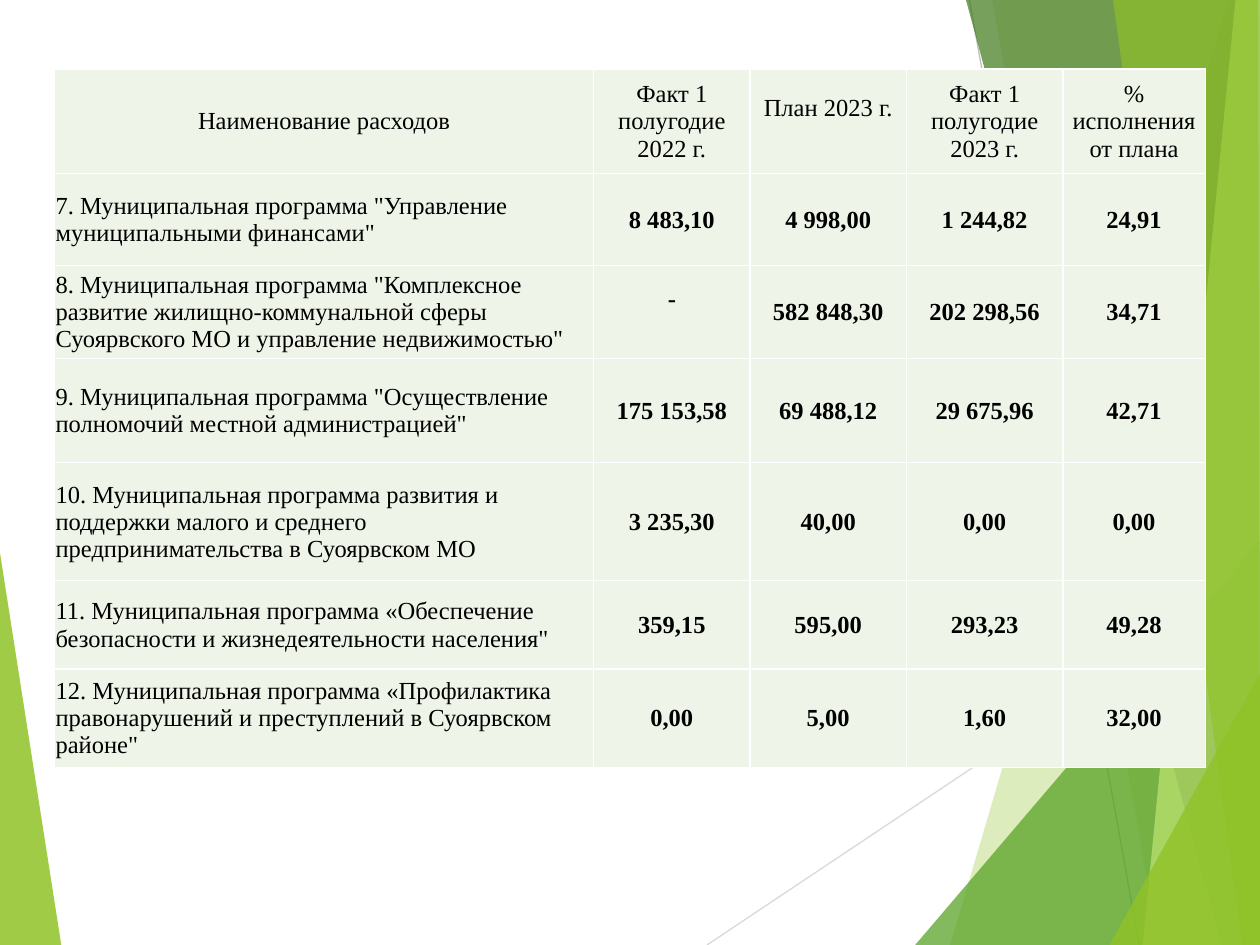
from lxml import etree
from pptx import Presentation
from pptx.dml.color import RGBColor
from pptx.enum.shapes import MSO_CONNECTOR
from pptx.enum.text import MSO_ANCHOR, PP_ALIGN
from pptx.oxml.ns import qn
from pptx.util import Pt

STRAIGHT = MSO_CONNECTOR.STRAIGHT
MIDDLE = MSO_ANCHOR.MIDDLE
LEFT, CENTER = PP_ALIGN.LEFT, PP_ALIGN.CENTER

WIDE, HIGH = 720, 540
FONT, SIZE = "Times New Roman", 14
COLORS = {
    "lime": "90C226", "green": "54A021", "dark": "3F7819", "pale": "C0E474",
    "light": "D9D9D9", "gray": "BFBFBF",
    "cell": "EEF4E8", "edge": "FFFFFF", "text": "000000",
}

DECOR = [
    ("shape", "lime", 85, [(0, 316), (35, HIGH), (0, HIGH)]),
    ("line", "light", 0.75, [(404, HIGH), (WIDE, 329)]),
    ("line", "gray", 0.75, [(554, 0), (651, HIGH)]),
    ("shape", "lime", 30, [(702, 0), (543, HIGH), (WIDE, HIGH), (WIDE, 0)]),
    ("shape", "lime", 20, [(567, 0), (662, HIGH), (WIDE, HIGH), (WIDE, 0)]),
    ("shape", "green", 72, [(523, HIGH), (WIDE, 309), (WIDE, HIGH)]),
    ("shape", "dark", 70, [(552, 0), (698, HIGH), (WIDE, HIGH), (WIDE, 0)]),
    ("shape", "pale", 70, [(706, 0), (653, HIGH), (WIDE, HIGH), (WIDE, 0)]),
    ("shape", "lime", 65, [(636, 0), (710, HIGH), (WIDE, HIGH), (719, 0)]),
    ("shape", "lime", 80, [(634, HIGH), (WIDE, 385), (WIDE, HIGH)]),
]

ROWS = [
    ("Наименование расходов", "Факт 1 полугодие 2022 г.", "План 2023 г.",
     "Факт 1 полугодие 2023 г.", "% исполнения от плана"),
    ('7. Муниципальная программа "Управление муниципальными финансами"',
     "8 483,10", "4 998,00", "1 244,82", "24,91"),
    ('8. Муниципальная программа "Комплексное развитие жилищно-коммунальной '
     'сферы Суоярвского МО и управление недвижимостью"',
     "-", "582 848,30", "202 298,56", "34,71"),
    ('9. Муниципальная программа "Осуществление полномочий местной администрацией"',
     "175 153,58", "69 488,12", "29 675,96", "42,71"),
    ("10. Муниципальная программа развития и поддержки малого и среднего "
     "предпринимательства в Суоярвском МО",
     "3 235,30", "40,00", "0,00", "0,00"),
    ('11. Муниципальная программа «Обеспечение безопасности и '
     'жизнедеятельности населения"',
     "359,15", "595,00", "293,23", "49,28"),
    ('12. Муниципальная программа «Профилактика правонарушений и '
     'преступлений в Суоярвском районе"',
     "0,00", "5,00", "1,60", "32,00"),
]
TABLE_LEFT, TABLE_TOP = 31.25, 39.5
COLS = [308, 89.4, 89.4, 89.4, 81.4]
HEIGHTS = [59.6, 52.6, 53.2, 59.6, 67.4, 50.4, 56.4]
RAISED = {(0, 2), (2, 1)}
LIFT = 15.5


def rgb(name):
    """Return the named colour."""
    return RGBColor.from_string(COLORS[name])


def add_shape(group, color, alpha, points):
    """Draw a translucent polygon."""
    path = group.shapes.build_freeform(*points[0], scale=Pt(1))
    path.add_line_segments(points[1:], close=True)
    shape = path.convert_to_shape()
    shape.shadow.inherit = False
    shape.line.fill.background()
    shape.fill.solid()
    shape.fill.fore_color.rgb = rgb(color)
    tint = shape.fill._xPr.find(".//" + qn("a:srgbClr"))
    etree.SubElement(tint, qn("a:alpha")).set("val", str(alpha * 1000))


def add_line(group, color, width, points):
    """Draw a thin straight line."""
    ends = [Pt(value) for point in points for value in point]
    line = group.shapes.add_connector(STRAIGHT, *ends)
    line.line.color.rgb = rgb(color)
    line.line.width = Pt(width)
    etree.SubElement(line._element.spPr, qn("a:effectLst"))


def set_edges(cell):
    """Put a one-point border on each side of a cell."""
    props = cell._tc.get_or_add_tcPr()
    for index, side in enumerate(("lnL", "lnR", "lnT", "lnB")):
        edge = etree.Element(qn("a:" + side), w=str(Pt(1)))
        fill = etree.SubElement(edge, qn("a:solidFill"))
        etree.SubElement(fill, qn("a:srgbClr")).set("val", COLORS["edge"])
        props.insert(index, edge)


def fill_cell(cell, row, col, text):
    """Write and format one table cell."""
    cell.fill.solid()
    cell.fill.fore_color.rgb = rgb("cell")
    set_edges(cell)
    cell.vertical_anchor = MIDDLE
    cell.margin_left = cell.margin_right = cell.margin_top = Pt(0.5)
    cell.margin_bottom = Pt(LIFT if (row, col) in RAISED else 0)
    para = cell.text_frame.paragraphs[0]
    para.alignment = LEFT if row and not col else CENTER
    run = para.add_run()
    run.text = text
    run.font.name = FONT
    run.font.size = Pt(SIZE)
    run.font.bold = bool(row and col)
    run.font.color.rgb = rgb("text")


def add_table(slide):
    """Build the table of programme spending."""
    frame = slide.shapes.add_table(
        len(ROWS), len(COLS), Pt(TABLE_LEFT), Pt(TABLE_TOP),
        Pt(sum(COLS)), Pt(sum(HEIGHTS)))
    table = frame.table
    table.first_row = table.horz_banding = False
    for col, width in zip(table.columns, COLS):
        col.width = Pt(width)
    for row, height in zip(table.rows, HEIGHTS):
        row.height = Pt(height)
    for row, texts in enumerate(ROWS):
        for col, text in enumerate(texts):
            fill_cell(table.cell(row, col), row, col, text)


def main():
    """Build and save the slide."""
    deck = Presentation()
    deck.slide_width, deck.slide_height = Pt(WIDE), Pt(HIGH)
    slide = deck.slides.add_slide(deck.slide_layouts[6])
    group = slide.shapes.add_group_shape()
    draw = {"shape": add_shape, "line": add_line}
    for kind, *parts in DECOR:
        draw[kind](group, *parts)
    add_table(slide)
    deck.save("out.pptx")


if __name__ == "__main__":
    main()
